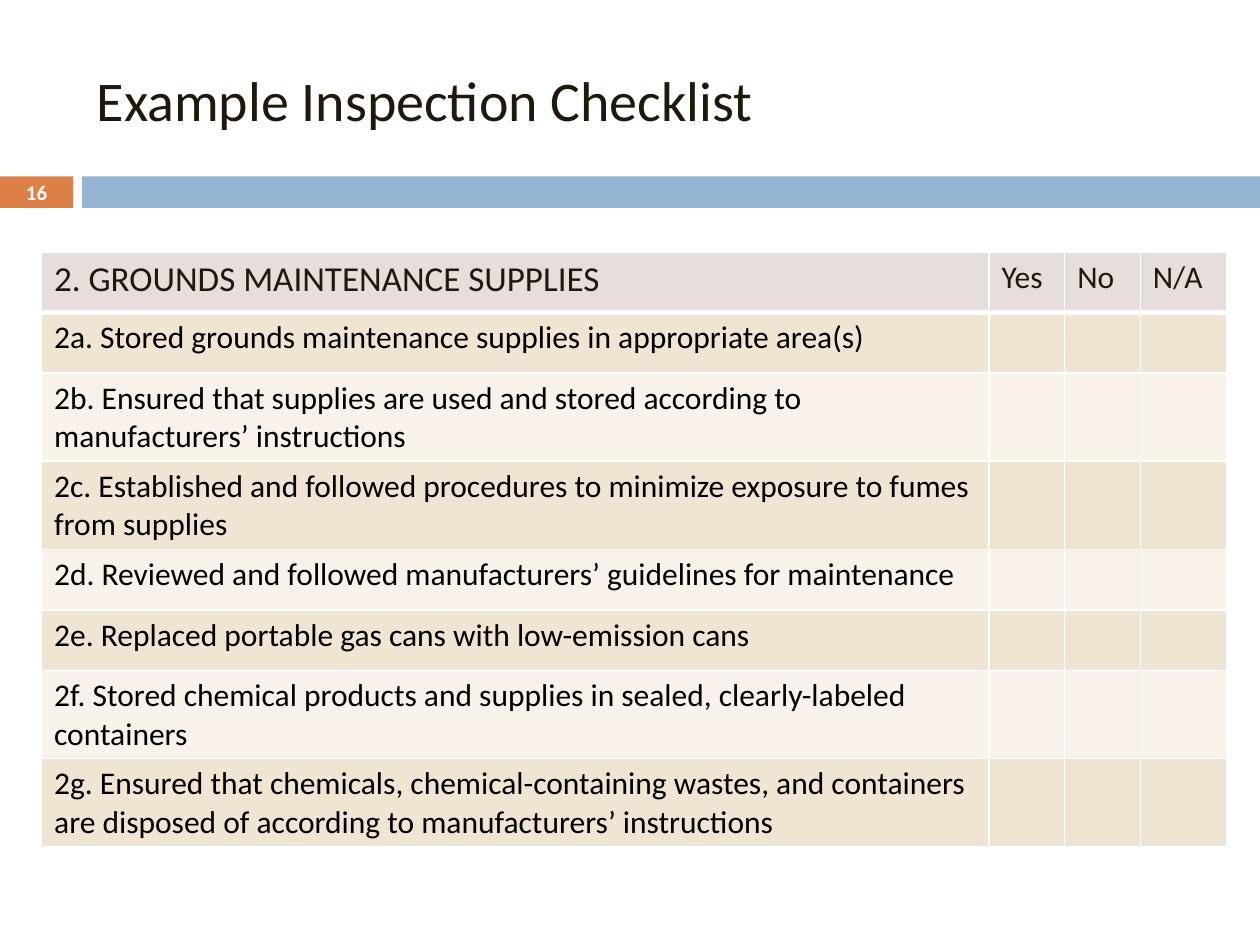
from lxml.etree import SubElement
from pptx import Presentation
from pptx.dml.color import RGBColor
from pptx.enum.shapes import MSO_SHAPE
from pptx.enum.text import MSO_ANCHOR, PP_ALIGN
from pptx.oxml.ns import qn
from pptx.util import Inches, Pt

COLORS = {
    "ink": "20190B",
    "body": "000000",
    "white": "FFFFFF",
    "orange": "DD8047",
    "blue": "94B6D2",
    "header": "E6DEDB",
    "sand": "F0E4D2",
    "cream": "F8F2EA",
}
GRID_COLUMNS, GRID_ROWS = 10, 7.5

HEADINGS = ["2. GROUNDS MAINTENANCE SUPPLIES", "Yes", "No", "N/A"]
ITEMS = [
    "2a. Stored grounds maintenance supplies in appropriate area(s)",
    "2b. Ensured that supplies are used and stored according to manufacturers’ instructions",
    "2c. Established and followed procedures to minimize exposure to fumes from supplies",
    "2d. Reviewed and followed manufacturers’ guidelines for maintenance",
    "2e. Replaced portable gas cans with low-emission cans",
    "2f. Stored chemical products and supplies in sealed, clearly-labeled containers",
    "2g. Ensured that chemicals, chemical-containing wastes, and containers "
    "are disposed of according to manufacturers’ instructions",
]


class ChecklistSlide:
    """Hold the style and the current slide, placing elements on a grid."""

    def __init__(self, deck, font="Calibri"):
        self.font = font
        self.column = deck.slide_width / GRID_COLUMNS
        self.row = deck.slide_height / GRID_ROWS
        self.slide = deck.slides.add_slide(deck.slide_layouts[6])

    def place(self, left, top, width, height):
        return (int(left * self.column), int(top * self.row),
                int(width * self.column), int(height * self.row))

    def color(self, name):
        return RGBColor.from_string(COLORS[name])

    def set_text(self, frame, text, size, color, bold=False, align=PP_ALIGN.LEFT):
        para = frame.paragraphs[0]
        para.text = text
        para.alignment = align
        para.font.name = self.font
        para.font.size = Pt(size)
        para.font.bold = bold
        para.font.color.rgb = self.color(color)

    def bar(self, area, color):
        bar = self.slide.shapes.add_shape(MSO_SHAPE.RECTANGLE, *self.place(*area))
        bar.shadow.inherit = False
        bar.fill.solid()
        bar.fill.fore_color.rgb = self.color(color)
        bar.line.fill.background()

    def text(self, area, text, size, color, **style):
        box = self.slide.shapes.add_textbox(*self.place(*area))
        box.text_frame.word_wrap = True
        box.text_frame.vertical_anchor = MSO_ANCHOR.MIDDLE
        self.set_text(box.text_frame, text, size, color, **style)

    def borders(self, cell, bottom):
        properties = cell._tc.get_or_add_tcPr()
        for side, width in zip("LRTB", (1, 1, 1, bottom)):
            line = SubElement(properties, qn(f"a:ln{side}"), w=str(Pt(width)))
            fill = SubElement(line, qn("a:solidFill"))
            SubElement(fill, qn("a:srgbClr"), val=COLORS["white"])

    def table(self, area, widths, heights, rows):
        table = self.slide.shapes.add_table(
            len(rows), len(widths), *self.place(*area)).table
        for column, width in zip(table.columns, widths):
            column.width = int(width * self.column)
        for index, (row, height, texts) in enumerate(zip(table.rows, heights, rows)):
            row.height = int(height * self.row)
            heading = index == 0
            fill = "header" if heading else ("cream", "sand")[index % 2]
            for position, (cell, text) in enumerate(zip(row.cells, texts)):
                self.borders(cell, 3 if heading else 1)
                cell.fill.solid()
                cell.fill.fore_color.rgb = self.color(fill)
                size = 20 if heading and position == 0 else 18
                self.set_text(cell.text_frame, text, size, "ink" if heading else "body")


def main():
    deck = Presentation()
    deck.slide_width, deck.slide_height = Inches(10), Inches(7.5)
    page = ChecklistSlide(deck)
    page.bar((0, 1.4, 0.58, 0.25), "orange")
    page.bar((0.65, 1.4, 9.35, 0.25), "blue")
    page.text((0.67, 0.25, 8.5, 1.08), "Example Inspection Checklist", 32, "ink")
    page.text((0, 1.39, 0.58, 0.27), "16", 11.9, "white",
              bold=True, align=PP_ALIGN.CENTER)
    rows = [HEADINGS] + [[item, "", "", ""] for item in ITEMS]
    page.table((0.33, 2, 9.41, 4.03), [7.52, 0.6, 0.6, 0.69],
               [0.48] * len(ITEMS) + [0.67], rows)
    deck.save("out.pptx")


if __name__ == "__main__":
    main()
